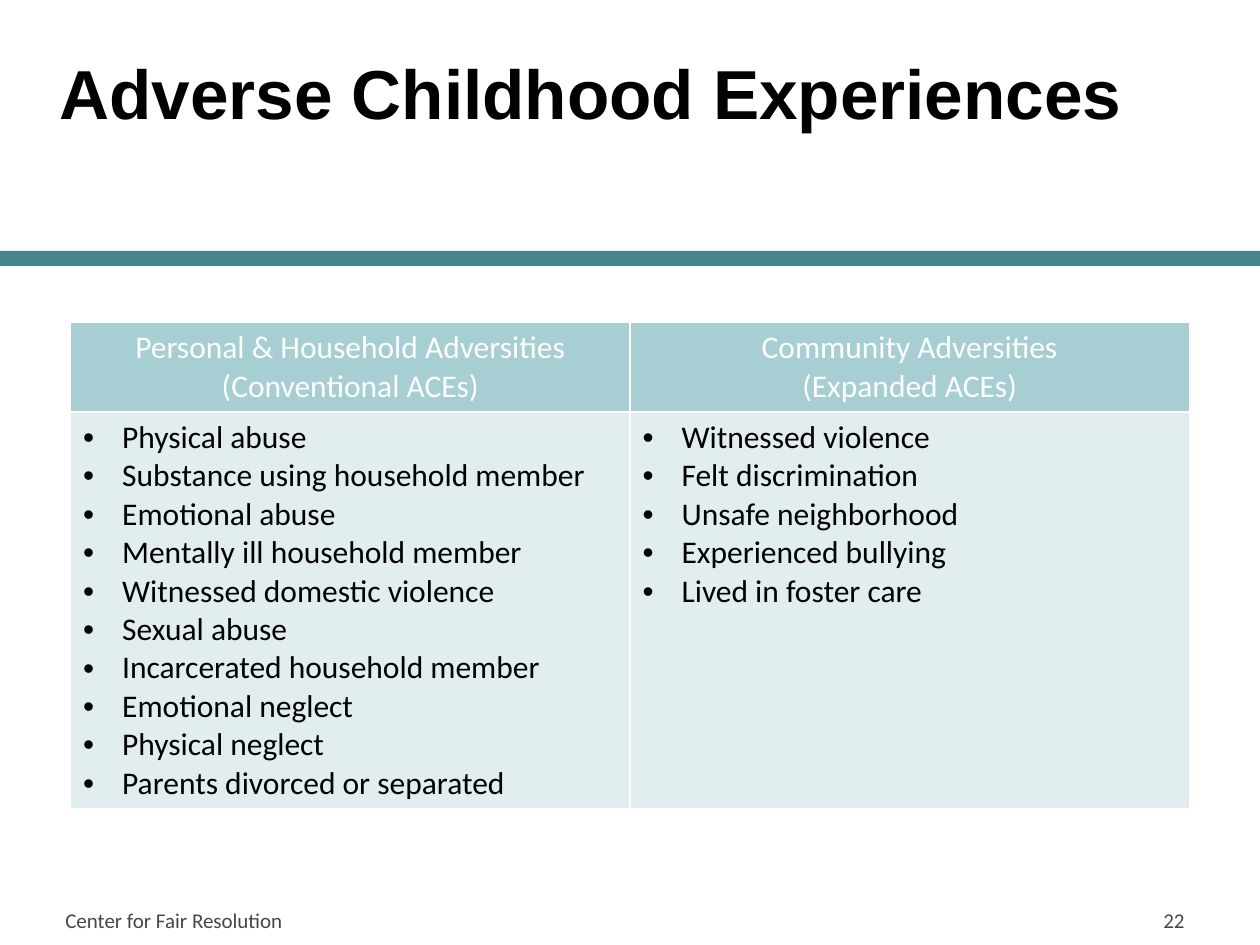
from lxml.etree import SubElement
from pptx import Presentation
from pptx.dml.color import RGBColor
from pptx.enum.shapes import MSO_SHAPE
from pptx.enum.text import MSO_ANCHOR, PP_ALIGN
from pptx.oxml.ns import qn
from pptx.util import Inches, Pt

TITLE = "Adverse Childhood Experiences"
FOOTER = "Center for Fair Resolution"
PAGE_NUMBER = "22"
COLUMNS = [
    (["Personal & Household Adversities (Conventional ACEs)"],
     ["Physical abuse", "Substance using household member", "Emotional abuse",
      "Mentally ill household member", "Witnessed domestic violence",
      "Sexual abuse", "Incarcerated household member", "Emotional neglect",
      "Physical neglect", "Parents divorced or separated"]),
    (["Community Adversities", "(Expanded ACEs)"],
     ["Witnessed violence", "Felt discrimination", "Unsafe neighborhood",
      "Experienced bullying", "Lived in foster care"]),
]
COLORS = {"bar": "46858C", "header": "A7CED3", "body": "E1EDEF",
          "white": "FFFFFF", "black": "000000", "footer": "464646"}
ROW_HEIGHTS = [0.71, 3.15]


def color(name):
    return RGBColor.from_string(COLORS[name])


def format_text(paragraph, font_name, size, color_name, bold=False,
                alignment=PP_ALIGN.LEFT):
    paragraph.alignment = alignment
    for run in paragraph.runs:
        run.font.name = font_name
        run.font.size = Pt(size)
        run.font.bold = bold
        run.font.color.rgb = color(color_name)


def add_bullet(paragraph, indent=0.31):
    properties = paragraph._p.get_or_add_pPr()
    properties.set("marL", str(Inches(indent)))
    properties.set("indent", str(-Inches(indent)))
    SubElement(properties, qn("a:buFont"), typeface="Arial")
    SubElement(properties, qn("a:buChar"), char="•")


def add_borders(cell):
    """Draw white lines on all four sides; they must precede the fill in the XML."""
    properties = cell._tc.get_or_add_tcPr()
    for position, side in enumerate(("lnL", "lnR", "lnT", "lnB")):
        line = SubElement(properties, qn(f"a:{side}"), w=str(Pt(1)))
        fill = SubElement(line, qn("a:solidFill"))
        SubElement(fill, qn("a:srgbClr"), val=COLORS["white"])
        properties.insert(position, line)


def fill_cell(cell, lines, fill_name, text_color, alignment, bulleted):
    cell.fill.solid()
    cell.fill.fore_color.rgb = color(fill_name)
    add_borders(cell)
    cell.text_frame.text = "\n".join(lines)
    for paragraph in cell.text_frame.paragraphs:
        format_text(paragraph, "Calibri", 18, text_color, alignment=alignment)
        if bulleted:
            add_bullet(paragraph)


def add_footer_text(slide, text, left, width, alignment):
    box = slide.shapes.add_textbox(Inches(left), Inches(7.1), Inches(width), Inches(0.4))
    frame = box.text_frame
    frame.word_wrap = True
    frame.vertical_anchor = MSO_ANCHOR.MIDDLE
    frame.text = text
    format_text(frame.paragraphs[0], "Calibri", 12, "footer", alignment=alignment)


def add_title(slide):
    title = slide.shapes.title
    title.left, title.top = Inches(0.37), Inches(0.3)
    title.width, title.height = Inches(9.26), Inches(1.45)
    frame = title.text_frame
    frame.margin_top = Inches(0.1)
    frame.vertical_anchor = MSO_ANCHOR.TOP
    frame.text = TITLE
    format_text(frame.paragraphs[0], "Arial", 39.6, "black", bold=True)


def add_bar(slide):
    bar = slide.shapes.add_shape(MSO_SHAPE.RECTANGLE, 0, Inches(1.99), Inches(10), Inches(0.12))
    bar.shadow.inherit = False
    bar.fill.solid()
    bar.fill.fore_color.rgb = color("bar")
    bar.line.fill.background()


def add_adversity_table(slide):
    table = slide.shapes.add_table(
        len(ROW_HEIGHTS), len(COLUMNS), Inches(0.56), Inches(2.56),
        Inches(8.88), Inches(sum(ROW_HEIGHTS))).table
    for row, height in zip(table.rows, ROW_HEIGHTS):
        row.height = Inches(height)
    for index, (heading, items) in enumerate(COLUMNS):
        fill_cell(table.cell(0, index), heading, "header", "white", PP_ALIGN.CENTER, False)
        fill_cell(table.cell(1, index), items, "body", "black", PP_ALIGN.LEFT, True)


def main():
    presentation = Presentation()
    presentation.slide_width, presentation.slide_height = Inches(10), Inches(7.5)
    slide = presentation.slides.add_slide(presentation.slide_layouts[5])
    add_bar(slide)
    add_title(slide)
    add_footer_text(slide, FOOTER, 0.42, 3.17, PP_ALIGN.LEFT)
    add_footer_text(slide, PAGE_NUMBER, 7.17, 2.33, PP_ALIGN.RIGHT)
    add_adversity_table(slide)
    presentation.save("out.pptx")


if __name__ == "__main__":
    main()
